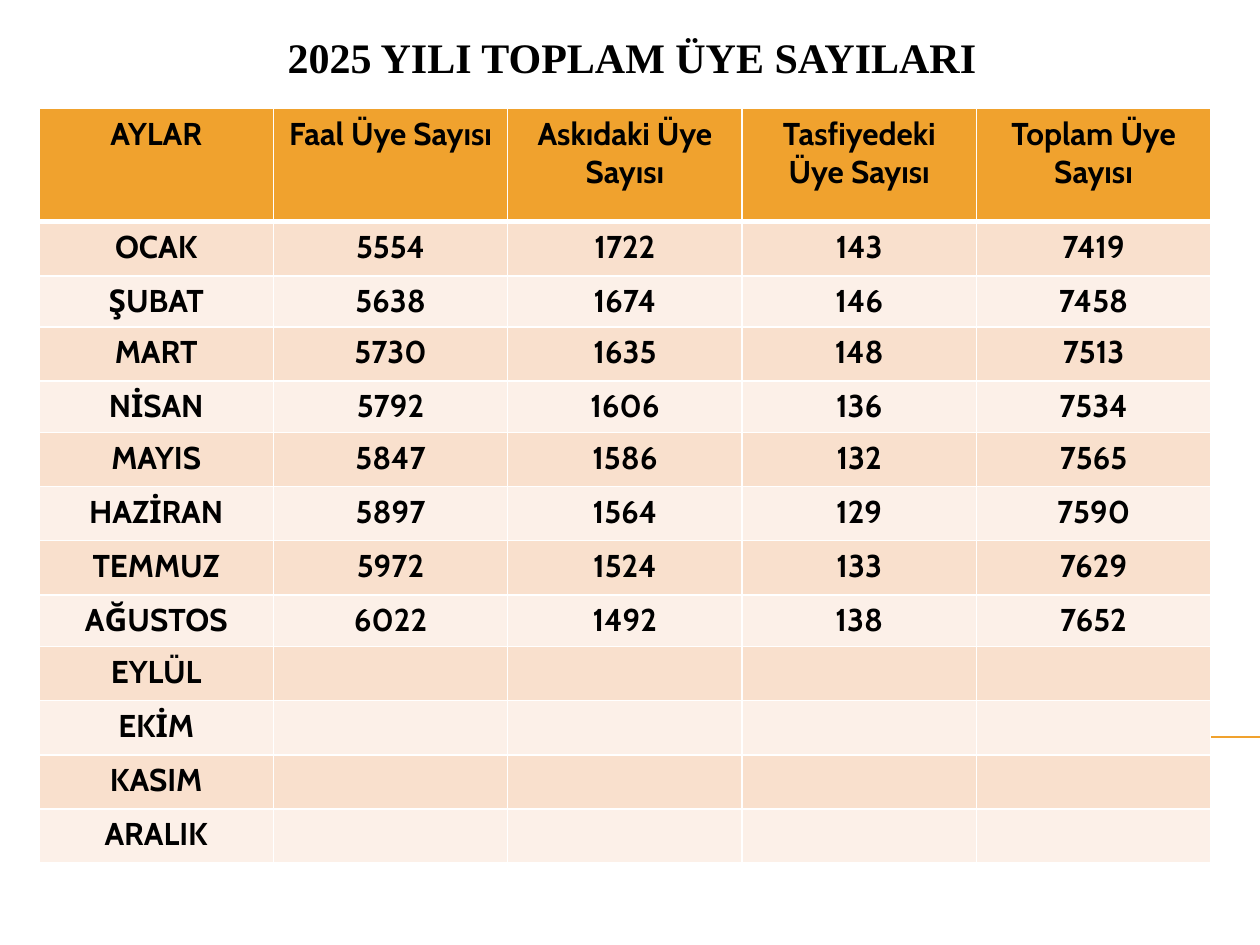
"""Build the slide of monthly member totals for 2025."""
from dataclasses import dataclass

from pptx import Presentation
from pptx import util as u
from pptx.dml.color import RGBColor
from pptx.enum import shapes, text
from pptx.oxml import parse_xml
from pptx.oxml.ns import nsdecls, qn

ORANGE, PEACH, CREAM = "F0A22E", "F9E0CD", "FCF0E8"
BLACK, WHITE = "000000", "FFFFFF"
HEADINGS = ("AYLAR", "Faal Üye Sayısı", "Askıdaki Üye Sayısı",
            "Tasfiyedeki Üye Sayısı", "Toplam Üye Sayısı")
COLUMN_WIDTH = 1.86


@dataclass(frozen=True)
class Month:
    name: str
    counts: tuple[int, ...] = ()
    height: float = 0.43


MONTHS = (
    Month("OCAK", (5554, 1722, 143, 7419)),
    Month("ŞUBAT", (5638, 1674, 146, 7458), 0.39),
    Month("MART", (5730, 1635, 148, 7513)),
    Month("NİSAN", (5792, 1606, 136, 7534), 0.35),
    Month("MAYIS", (5847, 1586, 132, 7565)),
    Month("HAZİRAN", (5897, 1564, 129, 7590)),
    Month("TEMMUZ", (5972, 1524, 133, 7629)),
    Month("AĞUSTOS", (6022, 1492, 138, 7652), 0.41),
    Month("EYLÜL"),
    Month("EKİM"),
    Month("KASIM"),
    Month("ARALIK"),
)


def color(value: str) -> RGBColor:
    return RGBColor.from_string(value)


def style_paragraph(para, font_name: str, size: float) -> None:
    para.alignment = text.PP_ALIGN.CENTER
    font = para.font
    font.name, font.size, font.bold = font_name, u.Pt(size), True
    font.color.rgb = color(BLACK)


def add_border(cell, side: str, points: float) -> None:
    properties = cell._tc.get_or_add_tcPr()
    border = parse_xml(
        f'<a:{side} {nsdecls("a")} w="{u.Pt(points)}"><a:solidFill>'
        f'<a:srgbClr val="{WHITE}"/></a:solidFill></a:{side}>')
    fill = properties.find(qn("a:solidFill"))
    fill.addprevious(border)


def fill_row(table, index: int, labels: tuple, fill: str) -> None:
    for column, cell in enumerate(table.rows[index].cells):
        cell.fill.solid()
        cell.fill.fore_color.rgb = color(fill)
        if column < len(labels):
            cell.text = str(labels[column])
        style_paragraph(cell.text_frame.paragraphs[0], "Cabin", 18)
        for side in ("lnL", "lnR", "lnT", "lnB"):
            heavy = (index, side) in ((0, "lnB"), (1, "lnT"))
            add_border(cell, side, 3 if heavy else 1)


def add_title(page, wording: str) -> None:
    box = page.shapes.title
    box.left, box.top = u.Inches(0.39), u.Inches(0.23)
    box.width, box.height = u.Inches(9.25), u.Inches(0.47)
    frame = box.text_frame
    frame.text = wording
    frame.vertical_anchor = text.MSO_ANCHOR.BOTTOM
    style_paragraph(frame.paragraphs[0], "Times New Roman", 24)


def add_rule(page) -> None:
    rule = page.shapes.add_connector(
        shapes.MSO_CONNECTOR.STRAIGHT, u.Inches(0.56), u.Inches(5.85),
        u.Inches(10), u.Inches(5.85))
    rule.line.color.rgb = color(ORANGE)
    rule.line.width = u.Pt(0.75)
    rule._element.spPr.append(parse_xml(f'<a:effectLst {nsdecls("a")}/>'))


def add_member_table(page) -> None:
    heights = [0.9] + [month.height for month in MONTHS]
    table = page.shapes.add_table(
        len(heights), len(HEADINGS), u.Inches(0.31), u.Inches(0.86),
        u.Inches(COLUMN_WIDTH * len(HEADINGS)), u.Inches(sum(heights))).table
    for column in table.columns:
        column.width = u.Inches(COLUMN_WIDTH)
    for row, height in zip(table.rows, heights):
        row.height = u.Inches(height)
    fill_row(table, 0, HEADINGS, ORANGE)
    for index, month in enumerate(MONTHS, start=1):
        fill_row(table, index, (month.name, *month.counts),
                 PEACH if index % 2 else CREAM)


def main() -> None:
    deck = Presentation()
    deck.slide_width, deck.slide_height = u.Inches(10), u.Inches(7.5)
    page = deck.slides.add_slide(deck.slide_layouts[5])
    add_rule(page)
    add_title(page, "2025 YILI TOPLAM ÜYE SAYILARI")
    add_member_table(page)
    deck.save("out.pptx")


if __name__ == "__main__":
    main()
